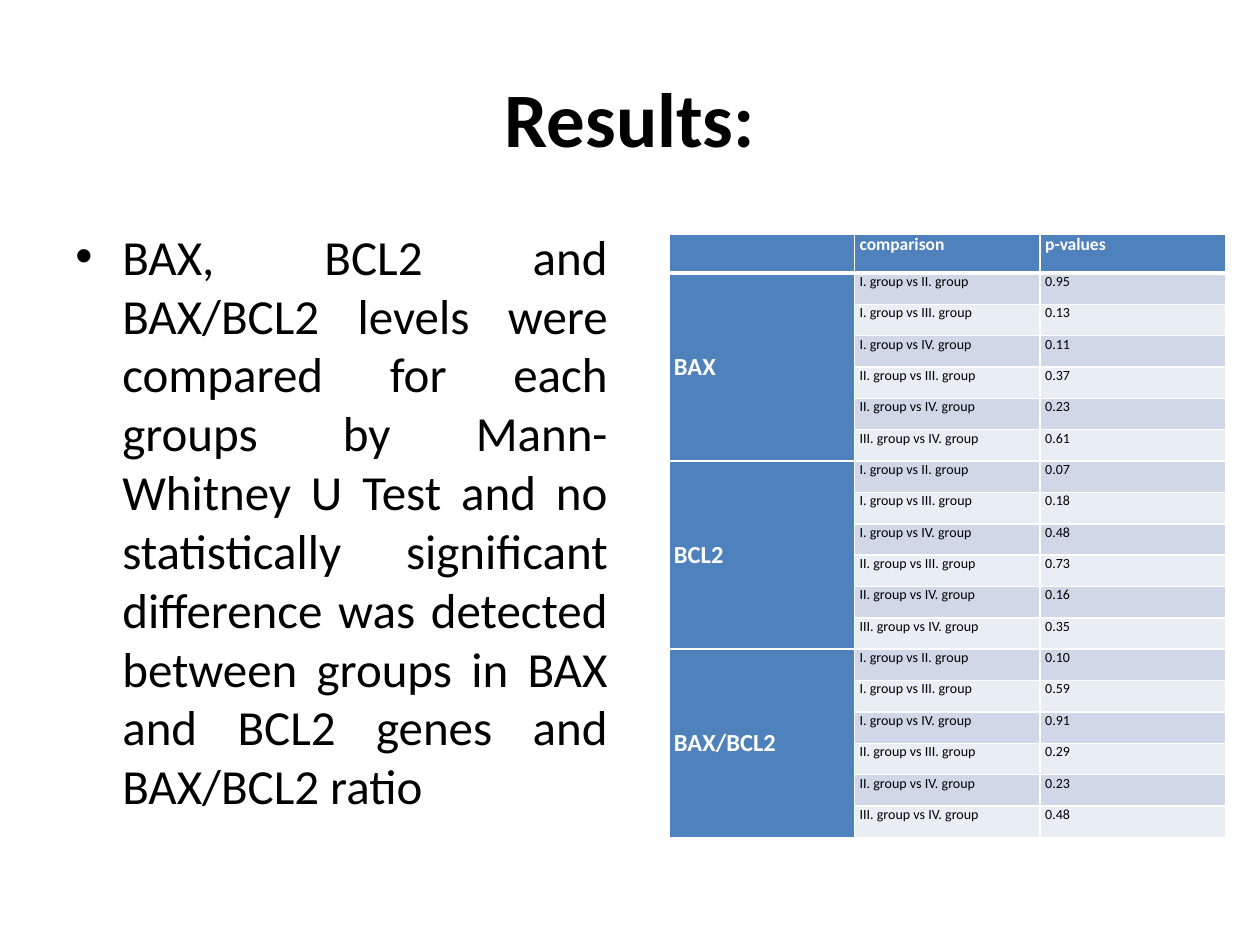
from lxml.etree import SubElement
from pptx import Presentation
from pptx.dml.color import RGBColor
from pptx.enum.text import MSO_ANCHOR as Anchor, PP_ALIGN as Align
from pptx.oxml.ns import qn
from pptx.util import Emu, Pt

SCALE = 914400 // 126
BLUE, WHITE, BLACK = "4F81BD", "FFFFFF", "000000"
BANDS = ["D0D8E8", "E9EDF4"]

TITLE = "Results:"
BODY = (
    "BAX, BCL2 and BAX/BCL2 levels were compared for each groups by "
    "Mann-Whitney U Test and no statistically significant difference was "
    "detected between groups in BAX and BCL2 genes and BAX/BCL2 ratio"
)
HEADS = ["", "comparison", "p-values"]
PAIRS = [
    "I. group vs II. group",
    "I. group vs III. group",
    "I. group vs IV. group",
    "II. group vs III. group",
    "II. group vs IV. group",
    "III. group vs IV. group",
]
GENES = {
    "BAX": ["0.95", "0.13", "0.11", "0.37", "0.23", "0.61"],
    "BCL2": ["0.07", "0.18", "0.48", "0.73", "0.16", "0.35"],
    "BAX/BCL2": ["0.10", "0.59", "0.91", "0.29", "0.23", "0.48"],
}


def px(num):
    return Emu(round(num * SCALE))


def color(code):
    return RGBColor.from_string(code)


class Deck:
    font = "Calibri"

    def __init__(self, wide, high):
        self.prs = Presentation()
        self.prs.slide_width, self.prs.slide_height = px(wide), px(high)
        self.slide = self.prs.slides.add_slide(self.prs.slide_layouts[6])

    def run(self, para, text, size, ink=BLACK, bold=False):
        run = para.add_run()
        run.text = text
        font = run.font
        font.name, font.size, font.bold = self.font, Pt(size), bold
        font.color.rgb = color(ink)

    def text(self, box, text, size, align, anchor=Anchor.TOP, bold=False):
        """Add a text box and return its paragraph."""
        frame = self.slide.shapes.add_textbox(*map(px, box)).text_frame
        frame.word_wrap = True
        frame.vertical_anchor = anchor
        para = frame.paragraphs[0]
        para.alignment = align
        self.run(para, text, size, bold=bold)
        return para

    def bullet(self, para, indent, before):
        para.space_before = Pt(before)
        props = para._p.get_or_add_pPr()
        props.set("marL", str(px(indent)))
        props.set("indent", str(-px(indent)))
        SubElement(props, qn("a:buFont"), typeface="Arial")
        SubElement(props, qn("a:buChar"), char="•")

    def table(self, box, rows, cols, head):
        """Add an unstyled grid with one head row and equal body rows."""
        frame = self.slide.shapes.add_table(rows, cols, *map(px, box))
        grid = frame.table
        for col in grid.columns:
            col.width = px(box[2] / cols)
        for row in grid.rows:
            row.height = px((box[3] - head) / (rows - 1))
        grid.rows[0].height = px(head)
        return grid

    def border(self, cell, **widths):
        props = cell._tc.get_or_add_tcPr()
        for side in "LRTB":
            line = SubElement(props, qn(f"a:ln{side}"),
                              w=str(Pt(widths.get(side, 1))))
            fill = SubElement(line, qn("a:solidFill"))
            SubElement(fill, qn("a:srgbClr"), val=WHITE)

    def cell(self, cell, text, size, fill, ink=WHITE, bold=True,
             anchor=Anchor.TOP, **widths):
        cell.margin_left = cell.margin_right = px(5)
        cell.margin_top = cell.margin_bottom = 0
        cell.vertical_anchor = anchor
        self.border(cell, **widths)
        cell.fill.solid()
        cell.fill.fore_color.rgb = color(fill)
        self.run(cell.text_frame.paragraphs[0], text, size, ink, bold)


def main():
    deck = Deck(1260, 945)
    deck.text((63, 38, 1134, 157), TITLE, 44, Align.CENTER,
              Anchor.MIDDLE, bold=True)
    body = deck.text((63, 220, 557, 624), BODY, 28, Align.JUSTIFY)
    deck.bullet(body, 47, 5.6)

    count = len(PAIRS)
    grid = deck.table((669, 234, 557, 604), 1 + count * len(GENES), 3, 39)
    for col, head in enumerate(HEADS):
        deck.cell(grid.cell(0, col), head, 10, BLUE, B=3)
    for part, (gene, values) in enumerate(GENES.items()):
        top = 1 + part * count
        grid.cell(top, 0).merge(grid.cell(top + count - 1, 0))
        for step, pair in enumerate(zip(PAIRS, values)):
            row = top + step
            edge = {"T": 3 if row == 1 else 1}
            name, size = (gene, 14) if step == 0 else ("", 8)
            deck.cell(grid.cell(row, 0), name, size, BLUE,
                      anchor=Anchor.MIDDLE, **edge)
            for col, text in enumerate(pair, 1):
                deck.cell(grid.cell(row, col), text, 8, BANDS[step % 2],
                          BLACK, False, **edge)
    deck.prs.save("out.pptx")


if __name__ == "__main__":
    main()
